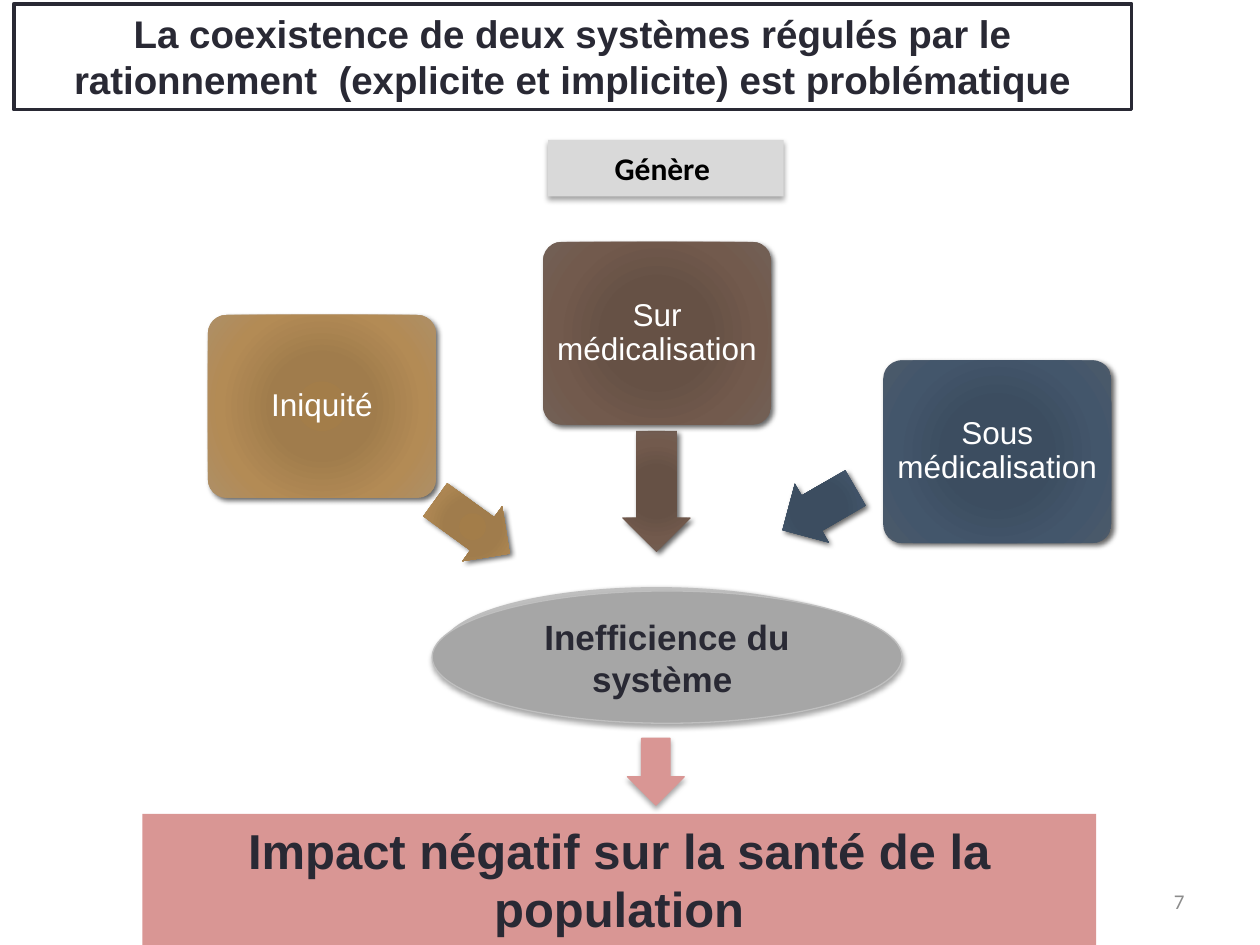
import pptx
import pptx.util
import pptx.oxml
import pptx.dml.color
import pptx.enum.shapes
import pptx.enum.text
from dataclasses import dataclass

Inches = pptx.util.Inches
MSO = pptx.enum.shapes.MSO_SHAPE
ALIGN = pptx.enum.text.PP_ALIGN
ANCHOR = pptx.enum.text.MSO_ANCHOR
NS = 'xmlns:a="http://schemas.openxmlformats.org/drawingml/2006/main"'


@dataclass(frozen=True)
class Theme:
    ink: str = "292934"
    black: str = "000000"
    white: str = "FFFFFF"
    muted: str = "8C8C8C"
    label: str = "D9D9D9"
    oval: str = "A6A6A6"
    oval_edge: str = "BFBFBF"
    impact: str = "D99694"
    # radial gradients: colours at the stops below
    ochre: tuple = ("A37D49", "A07C4C", "B38B55", "AD8F67")
    brown: tuple = ("685044", "665145", "725A4D", "726056")
    blue: tuple = ("3B4D61", "3C4D60", "43566B", "4C5A6A")
    stops: tuple = (0, 34, 70, 100)
    # shadows: opacity %, blur pt, distance pt, angle
    cause_shadow: tuple = (60, 3, 2, 45)
    soft_shadow: tuple = (35, 3.1, 1.8, 90)
    sans: str = "Arial"
    body: str = "Calibri"
    title_size: int = 22
    impact_size: int = 28
    oval_size: int = 20
    text_size: int = 18
    number_size: int = 12


T = Theme()

# Content
TITLE = ("La coexistence de deux systèmes régulés par le "
         "rationnement  (explicite et implicite) est problématique")
LABEL = "Génère "
RESULT = "Inefficience du système "
IMPACT = "Impact négatif sur la santé de la population"
NUMBER = "7"

# Causes: text, colours, card corner, arrow centre, arrow length, arrow rotation
CAUSES = [
    ("Iniquité", T.ochre, (1.65, 2.5), (3.75, 4.18), 0.73, 215.9),
    ("Sur médicalisation", T.brown, (4.31, 1.92), (5.21, 3.9), 0.96, 270),
    ("Sous médicalisation", T.blue, (7.01, 2.86), (6.5, 4.04), 0.67, 330),
]
CARD_W, CARD_H, ARROW_H = 1.81, 1.45, 0.54


def rgb(color):
    return pptx.dml.color.RGBColor.from_string(color)


def write(s, text, *, size, font=T.sans, color=T.ink, bold=False,
          align=ALIGN.CENTER, anchor=ANCHOR.MIDDLE, inset=None, spacing=None):
    tf = s.text_frame
    tf.word_wrap = True
    tf.vertical_anchor = anchor
    if inset is not None:
        tf.margin_left = tf.margin_right = Inches(inset)
        tf.margin_top = tf.margin_bottom = Inches(inset)
    p = tf.paragraphs[0]
    p.alignment = align
    if spacing:
        p.line_spacing = spacing
    r = p.add_run()
    r.text = text
    r.font.name, r.font.size, r.font.bold = font, pptx.util.Pt(size), bold
    r.font.color.rgb = rgb(color)


def gradient(colors):
    stops = "".join(
        f'<a:gs pos="{pos * 1000}"><a:srgbClr val="{c}"/></a:gs>'
        for pos, c in zip(T.stops, colors))
    return pptx.oxml.parse_xml(
        f'<a:gradFill {NS} rotWithShape="1"><a:gsLst>{stops}</a:gsLst>'
        '<a:path path="circle"><a:fillToRect l="100000" t="100000" '
        'r="100000" b="100000"/></a:path></a:gradFill>')


def shadow(opacity, blur, distance, angle):
    return pptx.oxml.parse_xml(
        f'<a:effectLst {NS}><a:outerShdw blurRad="{pptx.util.Pt(blur)}" '
        f'dist="{pptx.util.Pt(distance)}" dir="{angle * 60000}" '
        f'rotWithShape="0"><a:srgbClr val="{T.black}">'
        f'<a:alpha val="{opacity * 1000}"/></a:srgbClr>'
        '</a:outerShdw></a:effectLst>')


def add(kind, x, y, w, h, fill, *, line=None, width=0.75, cast=None,
        adjust=(), rotation=0):
    s = slide.shapes.add_shape(kind, *map(Inches, (x, y, w, h)))
    s.rotation = rotation
    for i, value in enumerate(adjust):
        s.adjustments[i] = value
    if line:
        s.line.color.rgb = rgb(line)
        s.line.width = pptx.util.Pt(width)
    else:
        s.line.fill.background()
    sp = s.element.spPr
    if isinstance(fill, tuple):
        sp.insert(sp.index(sp.prstGeom) + 1, gradient(fill))
    else:
        s.fill.solid()
        s.fill.fore_color.rgb = rgb(fill)
    if cast:
        sp.append(shadow(*cast))
    else:
        s.shadow.inherit = False
    return s


prs = pptx.Presentation()
prs.slide_width, prs.slide_height = Inches(10), Inches(7.5)
slide = prs.slides.add_slide(prs.slide_layouts[6])

# Slide number
number = slide.shapes.add_textbox(*map(Inches, (7.17, 6.95, 2.33, 0.4)))
write(number, NUMBER, size=T.number_size, font=T.body, color=T.muted,
      align=ALIGN.RIGHT)

# Title
title = add(MSO.RECTANGLE, 0.11, 0.03, 8.87, 0.84, T.white,
            line=T.ink, width=2.08)
write(title, TITLE, size=T.title_size, bold=True, anchor=ANCHOR.TOP)

# Oval behind the result
add(MSO.OVAL, 3.51, 4.66, 3.4, 0.96, T.oval_edge, cast=T.cause_shadow)

# Causes, each with an arrow to the result
for text, colors, (x, y), (cx, cy), length, rotation in CAUSES:
    add(MSO.LEFT_ARROW, cx - length / 2, cy - ARROW_H / 2, length, ARROW_H,
        colors, cast=T.cause_shadow, adjust=(0.6, 0.5), rotation=rotation)
    card = add(MSO.ROUNDED_RECTANGLE, x, y, CARD_W, CARD_H, colors,
               cast=T.cause_shadow, adjust=(0.1,))
    write(card, text, size=T.text_size, color=T.white, inset=0.04, spacing=0.9)

# Impact and the arrow leading to it
impact = add(MSO.RECTANGLE, 1.13, 6.46, 7.57, 1.04, T.impact)
write(impact, IMPACT, size=T.impact_size, bold=True, anchor=ANCHOR.TOP)
add(MSO.DOWN_ARROW, 4.98, 5.86, 0.45, 0.53, T.impact, line=T.impact,
    cast=T.soft_shadow)

# Label above the causes
label = add(MSO.RECTANGLE, 4.35, 1.11, 1.87, 0.45, T.label, cast=T.soft_shadow)
write(label, LABEL, size=T.text_size, font=T.body, color=T.black, bold=True)

# Result
result = add(MSO.OVAL, 3.43, 4.69, 3.73, 1.05, T.oval, line=T.oval_edge,
             cast=T.soft_shadow)
write(result, RESULT, size=T.oval_size, bold=True)

prs.save("out.pptx")
